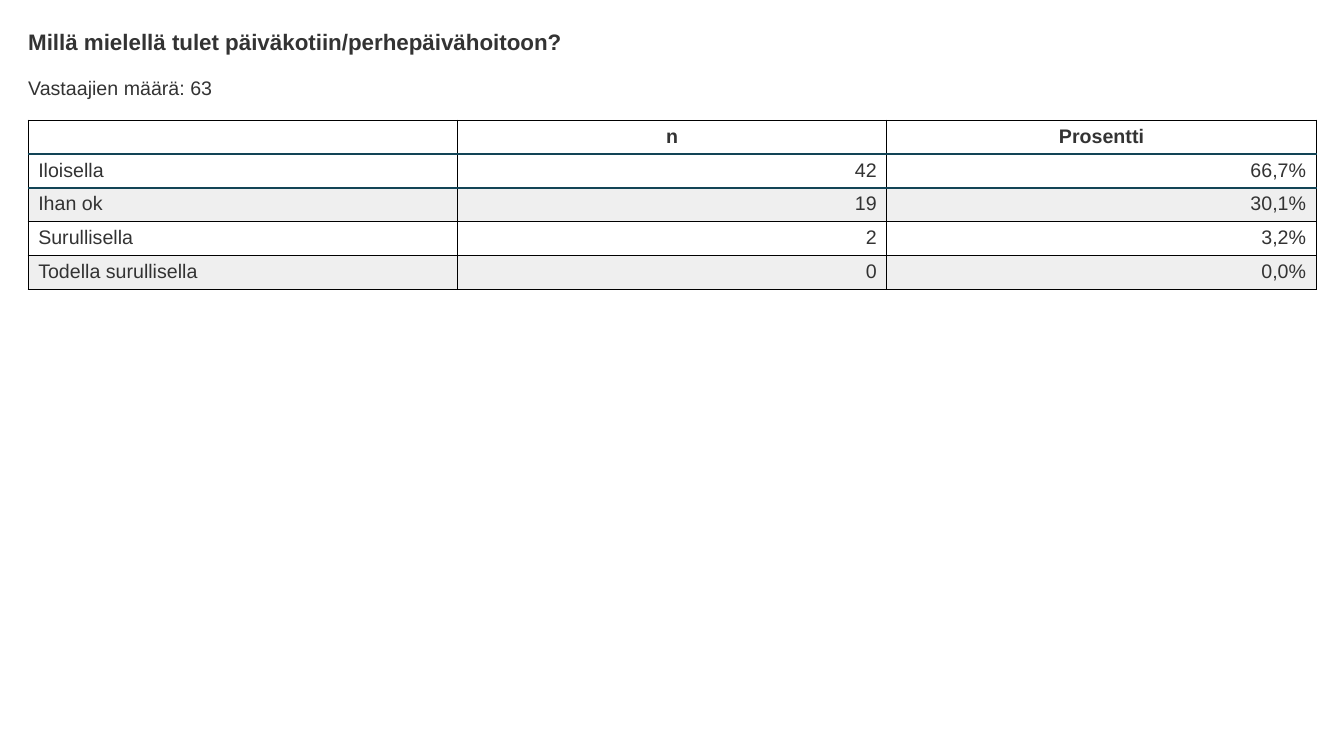
from lxml.etree import SubElement
from pptx import Presentation
from pptx.dml.color import RGBColor
from pptx.enum.text import MSO_ANCHOR, MSO_AUTO_SIZE, PP_ALIGN
from pptx.oxml.ns import qn
from pptx.util import Cm, Pt

COLORS = {"text": "333333", "band": "EFEFEF", "plain": "FFFFFF",
          "grid": "000000", "accent": "124456"}
LEFT, WIDTH, ROW_HEIGHT = Cm(0.71), Cm(32.46), Cm(0.85)


def write(frame, text, size=14, bold=False, align=PP_ALIGN.LEFT):
    paragraph = frame.paragraphs[0]
    paragraph.alignment = align
    if not text:
        # Keeps an empty cell as low as its neighbours
        SubElement(paragraph._p, qn("a:endParaRPr"), sz=str(size * 100))
        return
    run = paragraph.add_run()
    run.text = text
    run.font.name = "Arial"
    run.font.size = Pt(size)
    run.font.bold = bold
    run.font.color.rgb = RGBColor.from_string(COLORS["text"])


def add_border(cell, side, color, points):
    properties = cell._tc.get_or_add_tcPr()
    line = SubElement(properties, qn(f"a:ln{side}"), w=str(Pt(points)))
    fill = SubElement(line, qn("a:solidFill"))
    SubElement(fill, qn("a:srgbClr"), val=COLORS[color])


prs = Presentation()
prs.slide_width, prs.slide_height = Cm(33.87), Cm(19.05)
slide = prs.slides.add_slide(prs.slide_layouts[5])

# Question and number of respondents
question = slide.shapes.title
question.left, question.top, question.width, question.height = (
    LEFT, Cm(0.71), WIDTH, Cm(0.69))
respondents = slide.shapes.add_textbox(LEFT, Cm(1.91), WIDTH, Cm(0.58))
for box, text, size, bold in [
    (question, "Millä mielellä tulet päiväkotiin/perhepäivähoitoon?", 16, True),
    (respondents, "Vastaajien määrä: 63", 14, False),
]:
    frame = box.text_frame
    frame.margin_left = frame.margin_right = 0
    frame.margin_top = frame.margin_bottom = 0
    frame.word_wrap = True
    frame.auto_size = MSO_AUTO_SIZE.NONE
    frame.vertical_anchor = MSO_ANCHOR.TOP
    write(frame, text, size=size, bold=bold)

# Answers
answers = [
    ("", "n", "Prosentti"),
    ("Iloisella", "42", "66,7%"),
    ("Ihan ok", "19", "30,1%"),
    ("Surullisella", "2", "3,2%"),
    ("Todella surullisella", "0", "0,0%"),
]
table = slide.shapes.add_table(len(answers), 3, LEFT, Cm(3.03), WIDTH,
                               ROW_HEIGHT * len(answers)).table
table.first_row = table.horz_banding = False

for r, answer in enumerate(answers):
    # Accent lines run above and below the first answer
    top = ("accent", 2) if r in (1, 2) else ("grid", 1)
    bottom = ("accent", 2) if r in (0, 1) else ("grid", 1)
    banded = r > 0 and r % 2 == 0
    for c, text in enumerate(answer):
        cell = table.cell(r, c)
        if r == 0:
            align = PP_ALIGN.CENTER
        else:
            align = PP_ALIGN.RIGHT if c else PP_ALIGN.LEFT
        write(cell.text_frame, text, bold=r == 0, align=align)
        add_border(cell, "L", "grid", 1)
        add_border(cell, "R", "grid", 1)
        add_border(cell, "T", *top)
        add_border(cell, "B", *bottom)
        cell.fill.solid()
        cell.fill.fore_color.rgb = RGBColor.from_string(
            COLORS["band" if banded else "plain"])

prs.save("out.pptx")
